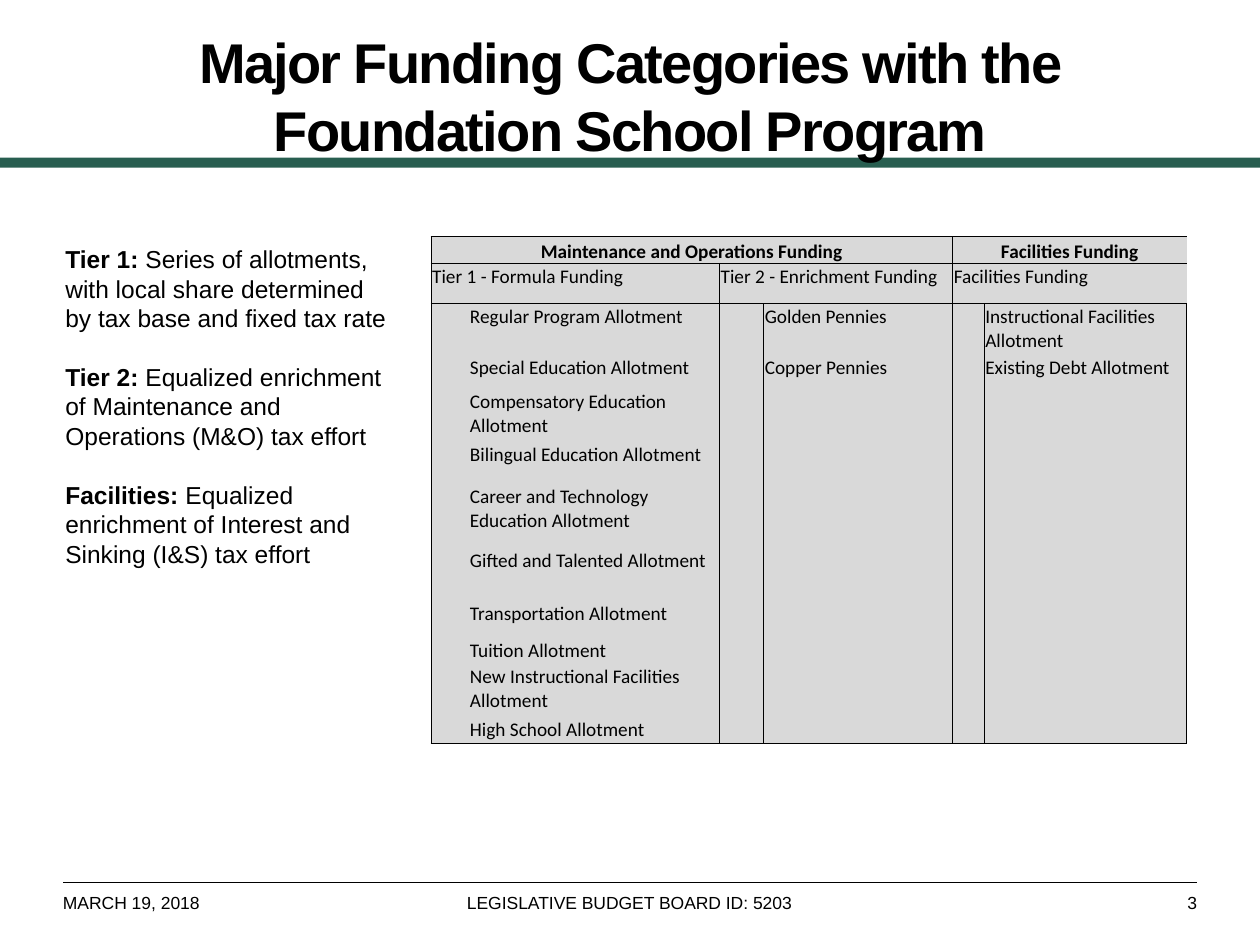
from lxml.etree import SubElement as Sub
from pptx import Presentation
from pptx.dml.color import RGBColor as Rgb
from pptx.enum.shapes import MSO_CONNECTOR as Conn, MSO_SHAPE as Form
from pptx.enum.text import MSO_ANCHOR as Anchor, PP_ALIGN as Align
from pptx.oxml.ns import qn
from pptx.util import Inches, Pt

# Content
TITLE = "Major Funding Categories with the Foundation School Program"
NOTES = [
    ("Tier 1: ", "Series of allotments, with local share determined by tax base and fixed tax rate"),
    ("Tier 2: ", "Equalized enrichment of Maintenance and Operations (M&O) tax effort"),
    ("Facilities: ", "Equalized enrichment of Interest and Sinking (I&S) tax effort"),
]
HEADS = [("Maintenance and Operations Funding", 0, 3), ("Facilities Funding", 4, 5)]
GROUPS = [
    ("Tier 1 - Formula Funding", [
        "Regular Program Allotment", "Special Education Allotment",
        "Compensatory Education Allotment", "Bilingual Education Allotment",
        "Career and Technology Education Allotment",
        "Gifted and Talented Allotment", "Transportation Allotment",
        "Tuition Allotment", "New Instructional Facilities Allotment",
        "High School Allotment"]),
    ("Tier 2 - Enrichment Funding", ["Golden Pennies", "Copper Pennies"]),
    ("Facilities Funding", ["Instructional Facilities Allotment", "Existing Debt Allotment"]),
]
FOOT = [
    ("MARCH 19, 2018", 0.5, 2.33, Align.LEFT),
    ("LEGISLATIVE BUDGET BOARD ID: 5203", 2.83, 4.33, Align.CENTER),
    ("3", 7.17, 2.33, Align.RIGHT),
]
COLS = [0.3, 1.99, 0.35, 1.5, 0.25, 1.61]
ROWS = [0.21, 0.32, 0.41, 0.27, 0.42, 0.33, 0.51, 0.42, 0.29, 0.21, 0.42, 0.21]

THEME = {
    "ink": Rgb(0, 0, 0), "band": Rgb(0x28, 0x5E, 0x50), "cell": Rgb(0xD9, 0xD9, 0xD9),
    "title": {"name": "Arial", "size": Pt(32), "bold": True},
    "note": {"name": "Arial", "size": Pt(14), "bold": False},
    "foot": {"name": "Arial", "size": Pt(10), "bold": False},
    "head": {"name": "Calibri", "size": Pt(11), "bold": True},
    "item": {"name": "Calibri", "size": Pt(11), "bold": False},
}
PLAIN = "{2D5ABB26-0587-4C30-8999-92F81FD0307C}"
SIDES = ("left", "right", "top", "bottom")

deck = Presentation()
deck.slide_width, deck.slide_height = Inches(10), Inches(7.5)
slide = deck.slides.add_slide(deck.slide_layouts[6])
shapes = slide.shapes


def write(para, text, style, **extra):
    run = para.add_run()
    run.text = text
    for key, val in {**THEME[style], **extra}.items():
        setattr(run.font, key, val)
    run.font.color.rgb = THEME["ink"]
    return run


def pad(part, *sizes):
    for side, size in zip(SIDES, sizes):
        setattr(part, "margin_" + side, Inches(size))


def box(x, y, w, h):
    frame = shapes.add_textbox(*map(Inches, (x, y, w, h))).text_frame
    frame.word_wrap = True
    return frame


def rule(cell, edges):
    props = cell._tc.get_or_add_tcPr()
    for edge in "LRTB":
        if edge in edges:
            line = Sub(props, qn("a:ln" + edge), w=str(Pt(0.5)))
            Sub(Sub(line, qn("a:solidFill")), qn("a:srgbClr"), val=str(THEME["ink"]))


# Green band and footer rule
band = shapes.add_shape(Form.RECTANGLE, 0, Inches(1.25), deck.slide_width, Inches(0.08))
band.shadow.inherit = False
band.fill.solid()
band.fill.fore_color.rgb = THEME["band"]
band.line.fill.background()
line = shapes.add_connector(Conn.STRAIGHT, *map(Inches, (0.5, 7, 9.5, 7)))
line.line.color.rgb = THEME["ink"]
line.line.width = Pt(0.25)
Sub(line._element.spPr, qn("a:effectLst"))

# Footer
for text, x, w, align in FOOT:
    frame = box(x, 7.08, w, 0.4)
    pad(frame, 0, 0, 0, 0)
    frame.paragraphs[0].alignment = align
    write(frame.paragraphs[0], text, "foot")

# Title
frame = box(0.5, 0.17, 9, 1.17)
frame.vertical_anchor = Anchor.MIDDLE
frame.paragraphs[0].alignment = Align.CENTER
run = write(frame.paragraphs[0], TITLE, "title")
run.font._element.set("spc", "-100")

# Notes on each tier
frame = box(0.42, 1.89, 2.75, 2.69)
for n, (label, text) in enumerate(NOTES):
    para = frame.add_paragraph() if n else frame.paragraphs[0]
    if n:
        para.space_before = Pt(16.8)
    write(para, label, "note", bold=True)
    write(para, text, "note")

# Table grid: borders enclose each group of columns
spot = map(Inches, (3.42, 1.88, sum(COLS), sum(ROWS)))
table = shapes.add_table(len(ROWS), len(COLS), *spot).table
table._tbl.tblPr.find(qn("a:tableStyleId")).text = PLAIN
table.first_row = table.horz_banding = False
for col, w in zip(table.columns, COLS):
    col.width = Inches(w)
for row, h in zip(table.rows, ROWS):
    row.height = Inches(h)
for r in range(len(ROWS)):
    starts, ends = ((0, 4), (3, 5)) if r == 0 else ((0, 2, 4), (1, 3, 5))
    for c in range(len(COLS)):
        cell = table.cell(r, c)
        edges = "L" * (c in starts) + "R" * (c in ends)
        edges += "T" * (r < 2) + "B" * (r in (0, len(ROWS) - 1))
        rule(cell, edges)
        pad(cell, 0.01, 0.01, 0.01, 0)
        cell.fill.solid()
        cell.fill.fore_color.rgb = THEME["cell"]
        cell.text_frame.paragraphs[0]._p.get_or_add_endParaRPr().set("sz", "1100")

# Table text
for text, a, b in HEADS:
    cell = table.cell(0, a)
    cell.merge(table.cell(0, b))
    cell.vertical_anchor = Anchor.BOTTOM
    para = cell.text_frame.paragraphs[0]
    para.alignment = Align.CENTER
    write(para, text, "head")
for g, (name, items) in enumerate(GROUPS):
    c = 2 * g
    table.cell(1, c).merge(table.cell(1, c + 1))
    write(table.cell(1, c).text_frame.paragraphs[0], name, "item")
    for r, text in enumerate(items, 2):
        write(table.cell(r, c + 1).text_frame.paragraphs[0], text, "item")

deck.save("out.pptx")
